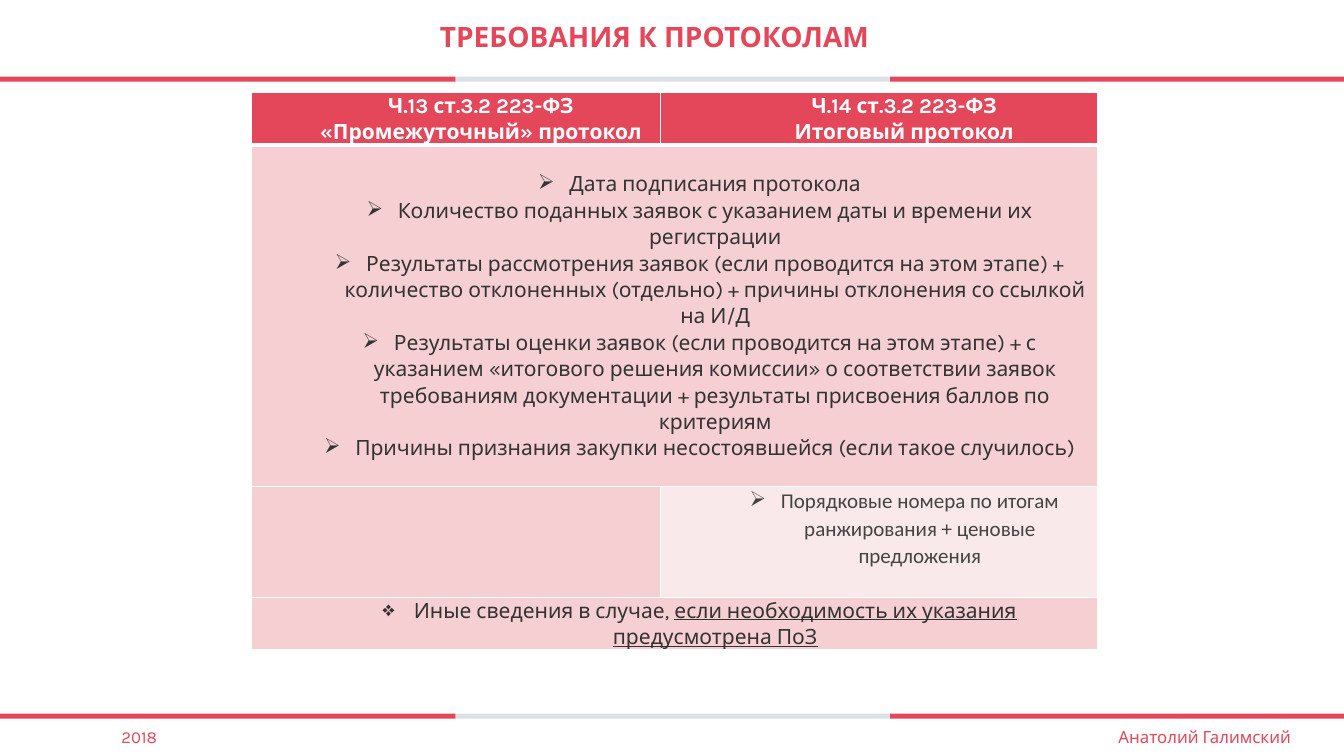
from dataclasses import dataclass

from lxml import etree
from pptx import Presentation
from pptx.dml.color import RGBColor
from pptx.enum.shapes import MSO_SHAPE
from pptx.enum.text import MSO_ANCHOR, PP_ALIGN
from pptx.oxml.ns import qn
from pptx.slide import Slide
from pptx.table import Table, _Cell
from pptx.text.text import TextFrame
from pptx.util import Emu, Inches, Pt

RECTANGLE = MSO_SHAPE.RECTANGLE
CENTER = PP_ALIGN.CENTER
TOP, MIDDLE = MSO_ANCHOR.TOP, MSO_ANCHOR.MIDDLE

COLORS = {
    "accent": "E4465A", "gray": "DBE1E4", "white": "FFFFFF", "rose": "F5CFD1",
    "pale": "FAE9EA", "text": "333333", "soft": "444444",
}
FORMATS = {
    "title": {"name": "Karla", "size": Pt(20), "bold": True},
    "footer": {"name": "Karla", "size": Pt(12), "bold": False},
    "header": {"name": "Karla", "size": Pt(15), "bold": True},
    "body": {"name": "Karla", "size": Pt(15), "bold": False},
    "ranking": {"name": "Calibri", "size": Pt(15), "bold": False},
}

# The slide is a grid of 100 columns by 100 rows.
SLIDE_WIDTH, SLIDE_HEIGHT = Inches(13.333), Inches(7.5)
RULE_COLUMNS = [(0, 33.9, "accent"), (33.9, 32.33, "gray"), (66.23, 33.77, "accent")]
RULE_ROWS = [10.13, 94.4]
RULE_HEIGHT = 0.67
TABLE_LEFT, TABLE_TOP = 18.68, 12.2
TABLE_COLUMNS = [30.45, 32.55]
TABLE_ROWS = [7, 45.2, 14.6, 7]
BORDER_SIDES = ["a:lnL", "a:lnR", "a:lnT", "a:lnB"]


@dataclass
class Caption:
    text: str
    left: float
    top: float
    width: float
    height: float
    style: str
    anchor: MSO_ANCHOR = TOP
    spacing: float = 1.0


@dataclass
class Entry:
    row: int
    column: int
    fill: str
    paragraphs: tuple[str, ...] = ()
    style: str = "body"
    color: str = "text"
    bullet: str = ""
    underlined: str = ""
    columns: int = 1
    anchor: MSO_ANCHOR = TOP


CAPTIONS = [
    Caption("ТРЕБОВАНИЯ К ПРОТОКОЛАМ", 14.78, 0, 67.8, 10.13, "title", MIDDLE, 0.9),
    Caption("Анатолий Галимский", 79.28, 95.47, 20.72, 4, "footer"),
    Caption("2018", 0, 95.47, 20.72, 4, "footer"),
]
ENTRIES = [
    Entry(0, 0, "accent", ("Ч.13 ст.3.2 223-ФЗ", "«Промежуточный» протокол"), "header", "white"),
    Entry(0, 1, "accent", ("Ч.14 ст.3.2 223-ФЗ", "Итоговый протокол"), "header", "white"),
    Entry(1, 0, "rose", (
        "Дата подписания протокола",
        "Количество поданных заявок с указанием даты и времени их регистрации",
        "Результаты рассмотрения заявок (если проводится на этом этапе) + количество "
        "отклоненных (отдельно) + причины отклонения со ссылкой на И/Д",
        "Результаты оценки заявок (если проводится на этом этапе) + с указанием «итогового "
        "решения комиссии» о соответствии заявок требованиям документации + результаты "
        "присвоения баллов по критериям",
        "Причины признания закупки несостоявшейся (если такое случилось)",
    ), bullet="➢", columns=2, anchor=MIDDLE),
    Entry(2, 0, "rose"),
    Entry(2, 1, "pale", ("Порядковые номера по итогам ранжирования + ценовые предложения",),
          "ranking", "soft", "➢"),
    Entry(3, 0, "rose", ("Иные сведения в случае, ",), bullet="❖",
          underlined="если необходимость их указания предусмотрена ПоЗ", columns=2),
]


def across(columns: float) -> Emu:
    return Emu(round(SLIDE_WIDTH * columns / 100))


def down(rows: float) -> Emu:
    return Emu(round(SLIDE_HEIGHT * rows / 100))


def rgb(color: str) -> RGBColor:
    return RGBColor.from_string(COLORS[color])


def add_words(paragraph, words: str, style: str, color: str, underline: bool = False) -> None:
    run = paragraph.add_run()
    run.text = words
    for attribute, value in FORMATS[style].items():
        setattr(run.font, attribute, value)
    run.font.color.rgb = rgb(color)
    if underline:
        run.font.underline = True


def draw_rules(slide: Slide) -> None:
    for top in RULE_ROWS:
        for left, width, color in RULE_COLUMNS:
            rule = slide.shapes.add_shape(
                RECTANGLE, across(left), down(top), across(width), down(RULE_HEIGHT))
            rule.shadow.inherit = False
            rule.fill.solid()
            rule.fill.fore_color.rgb = rgb(color)
            rule.line.fill.background()


def draw_caption(slide: Slide, caption: Caption) -> None:
    frame = slide.shapes.add_textbox(
        across(caption.left), down(caption.top),
        across(caption.width), down(caption.height)).text_frame
    frame.word_wrap = True
    frame.vertical_anchor = caption.anchor
    paragraph = frame.paragraphs[0]
    paragraph.alignment = CENTER
    paragraph.line_spacing = caption.spacing
    add_words(paragraph, caption.text, caption.style, "accent")


def paint_cell(cell: _Cell, fill: str, is_header: bool) -> None:
    """Fill the cell and give it white borders, thick below the header."""
    cell.fill.solid()
    cell.fill.fore_color.rgb = rgb(fill)
    properties = cell._tc.get_or_add_tcPr()
    for position, side in enumerate(BORDER_SIDES):
        points = 3 if is_header and side == "a:lnB" else 1
        border = etree.Element(qn(side), w=str(Pt(points)))
        solid = etree.SubElement(border, qn("a:solidFill"))
        etree.SubElement(solid, qn("a:srgbClr"), val=COLORS["white"])
        properties.insert(position, border)


def write_entry(frame: TextFrame, entry: Entry) -> None:
    for index, words in enumerate(entry.paragraphs):
        paragraph = frame.add_paragraph() if index else frame.paragraphs[0]
        paragraph.alignment = CENTER
        paragraph.line_spacing = 1.07
        properties = paragraph._p.get_or_add_pPr()
        properties.set("marL", str(Inches(0.81 if entry.bullet else 0.5)))
        properties.set("indent", str(Inches(-0.31 if entry.bullet else 0)))
        if entry.bullet:
            etree.SubElement(properties, qn("a:buChar"), char=entry.bullet)
        add_words(paragraph, words, entry.style, entry.color)
        if entry.underlined:
            add_words(paragraph, entry.underlined, entry.style, entry.color, True)


def draw_entry(table: Table, entry: Entry) -> None:
    cell = table.cell(entry.row, entry.column)
    last_column = entry.column + entry.columns - 1
    if entry.columns > 1:
        cell.merge(table.cell(entry.row, last_column))
    for column in range(entry.column, last_column + 1):
        paint_cell(table.cell(entry.row, column), entry.fill, entry.row == 0)
    cell.margin_left = cell.margin_right = Inches(0.04)
    cell.margin_top = cell.margin_bottom = 0
    cell.vertical_anchor = entry.anchor
    write_entry(cell.text_frame, entry)


def draw_table(slide: Slide) -> None:
    table = slide.shapes.add_table(
        len(TABLE_ROWS), len(TABLE_COLUMNS), across(TABLE_LEFT), down(TABLE_TOP),
        across(sum(TABLE_COLUMNS)), down(sum(TABLE_ROWS))).table
    table.first_row = table.horz_banding = False
    for column, width in zip(table.columns, TABLE_COLUMNS):
        column.width = across(width)
    for row, height in zip(table.rows, TABLE_ROWS):
        row.height = down(height)
    for entry in ENTRIES:
        draw_entry(table, entry)


def main() -> None:
    presentation = Presentation()
    presentation.slide_width, presentation.slide_height = SLIDE_WIDTH, SLIDE_HEIGHT
    slide = presentation.slides.add_slide(presentation.slide_layouts[6])
    draw_rules(slide)
    draw_table(slide)
    for caption in CAPTIONS:
        draw_caption(slide, caption)
    presentation.save("out.pptx")


if __name__ == "__main__":
    main()
